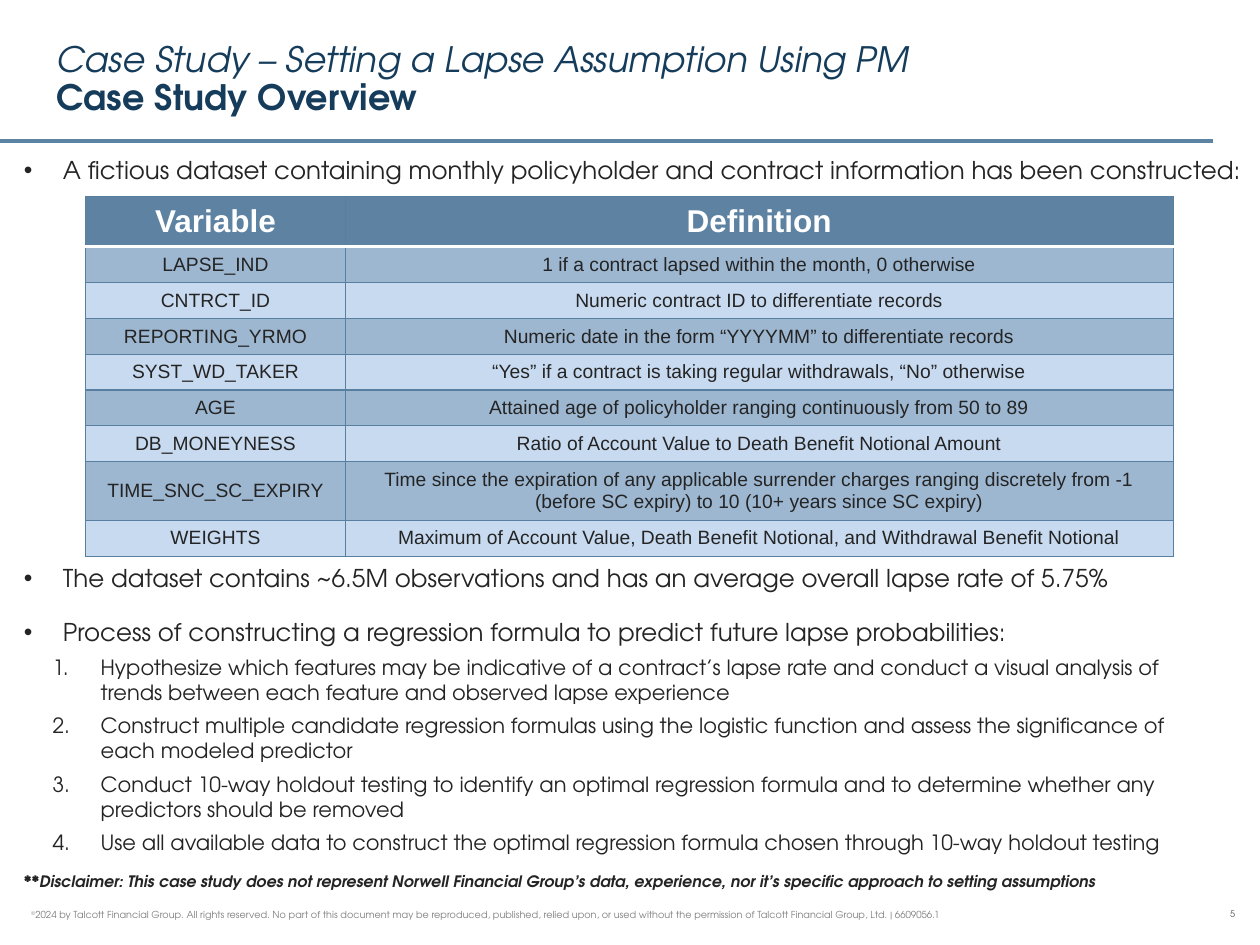
"""Build the case study overview slide on a lapse assumption."""
from lxml.etree import SubElement
from pptx import Presentation
from pptx.dml.color import RGBColor
from pptx.enum.shapes import MSO_CONNECTOR
from pptx.enum.text import MSO_ANCHOR, PP_ALIGN
from pptx.oxml.ns import qn
from pptx.util import Cm, Pt

BODY_FONT, TABLE_FONT = "TeX Gyre Adventor", "Arial"
INK, NAVY, STEEL, WHITE = "242424", "153C5B", "5D82A2", "FFFFFF"
RULE, GRID, BANDS = "5D83A3", "597FA0", ("9DB7D1", "C8DAF0")

TITLE = ("Case Study – Setting a Lapse Assumption Using PM", "Case Study Overview")
INTRO = "A fictious dataset containing monthly policyholder and contract information has been constructed:"
VARIABLES = [
    ("Variable", "Definition"),
    ("LAPSE_IND", "1 if a contract lapsed within the month, 0 otherwise"),
    ("CNTRCT_ID", "Numeric contract ID to differentiate records"),
    ("REPORTING_YRMO", "Numeric date in the form “YYYYMM” to differentiate records"),
    ("SYST_WD_TAKER", "“Yes” if a contract is taking regular withdrawals, “No” otherwise"),
    ("AGE", "Attained age of policyholder ranging continuously from 50 to 89"),
    ("DB_MONEYNESS", "Ratio of Account Value to Death Benefit Notional Amount"),
    ("TIME_SNC_SC_EXPIRY", "Time since the expiration of any applicable surrender charges ranging "
     "discretely from -1 (before SC expiry) to 10 (10+ years since SC expiry)"),
    ("WEIGHTS", "Maximum of Account Value, Death Benefit Notional, and Withdrawal Benefit Notional"),
]
COLUMN_WIDTHS = (5.23, 16.69)
ROW_HEIGHTS = [0.97] + [0.69] * 6 + [1.11, 0.71]
FINDINGS = [
    "The dataset contains ~6.5M observations and has an average overall lapse rate of 5.75%",
    "Process of constructing a regression formula to predict future lapse probabilities:",
]
STEPS = [
    "Hypothesize which features may be indicative of a contract’s lapse rate and conduct a visual "
    "analysis of trends between each feature and observed lapse experience",
    "Construct multiple candidate regression formulas using the logistic function and assess the "
    "significance of each modeled predictor",
    "Conduct 10-way holdout testing to identify an optimal regression formula and to determine "
    "whether any predictors should be removed",
    "Use all available data to construct the optimal regression formula chosen through 10-way "
    "holdout testing",
]
DISCLAIMER = ("**Disclaimer: This case study does not represent Norwell Financial Group’s data, "
              "experience, nor it’s specific approach to setting assumptions")
COPYRIGHT = ("2024 by Talcott Financial Group. All rights reserved. No part of this document may be "
             "reproduced, published, relied upon, or used without the permission of Talcott "
             "Financial Group, Ltd. | 6609056.1")
PAGE = "5"


def color(hex_string):
    return RGBColor.from_string(hex_string)


def write(paragraph, text, size=14, font=BODY_FONT, ink=INK, bold=False, italic=False):
    run = paragraph.add_run()
    run.text = text
    run.font.size, run.font.name = Pt(size), font
    run.font.bold, run.font.italic = bold, italic
    run.font.color.rgb = color(ink)
    return run


def text_frame(slide, left, top, width, height, anchor=MSO_ANCHOR.TOP):
    frame = slide.shapes.add_textbox(Cm(left), Cm(top), Cm(width), Cm(height)).text_frame
    frame.word_wrap = True
    frame.vertical_anchor = anchor
    return frame


def add_marker(paragraph, margin, hanging, numbered=False):
    properties = paragraph._p.get_or_add_pPr()
    properties.set("marL", str(Cm(margin)))
    properties.set("indent", str(-Cm(hanging)))
    if numbered:
        paragraph.level = 1
        SubElement(properties, qn("a:buAutoNum"), type="arabicPeriod")
    else:
        SubElement(properties, qn("a:buFont"), typeface="Arial")
        SubElement(properties, qn("a:buChar"), char="•")


def add_border(cell, side, ink, points):
    border = SubElement(cell._tc.get_or_add_tcPr(), qn(f"a:ln{side}"), w=str(Pt(points)))
    SubElement(SubElement(border, qn("a:solidFill")), qn("a:srgbClr"), val=ink)


def add_variable_table(slide):
    table = slide.shapes.add_table(
        len(VARIABLES), len(COLUMN_WIDTHS), Cm(1.73), Cm(3.96),
        Cm(sum(COLUMN_WIDTHS)), Cm(sum(ROW_HEIGHTS))).table
    for column, width in zip(table.columns, COLUMN_WIDTHS):
        column.width = Cm(width)
    for index, (row, height, entries) in enumerate(zip(table.rows, ROW_HEIGHTS, VARIABLES)):
        row.height = Cm(height)
        header = index == 0
        for cell, entry in zip(row.cells, entries):
            for side in "LRTB":
                divider = (index, side) in ((0, "B"), (1, "T"))
                add_border(cell, side, *((WHITE, 2) if divider else (GRID, 0.75)))
            cell.fill.solid()
            cell.fill.fore_color.rgb = color(STEEL if header else BANDS[(index - 1) % 2])
            cell.vertical_anchor = MSO_ANCHOR.MIDDLE
            paragraph = cell.text_frame.paragraphs[0]
            paragraph.alignment = PP_ALIGN.CENTER
            write(paragraph, entry, size=18 if header else 11, font=TABLE_FONT,
                  ink=WHITE if header else INK, bold=header)


def add_findings(slide):
    frame = text_frame(slide, 0.23, 11.23, 24.69, 6.22)
    for index, finding in enumerate(FINDINGS):
        paragraph = frame.add_paragraph() if index else frame.paragraphs[0]
        add_marker(paragraph, 0.79, 0.79)
        if index:
            paragraph.space_before = Pt(14)
        write(paragraph, finding)
    for step in STEPS:
        paragraph = frame.add_paragraph()
        add_marker(paragraph, 1.55, 0.97, numbered=True)
        paragraph.space_before = Pt(4.5)
        write(paragraph, step, size=12)


def main():
    deck = Presentation()
    deck.slide_width, deck.slide_height = Cm(25.4), Cm(19.05)
    slide = deck.slides.add_slide(deck.slide_layouts[6])

    rule = slide.shapes.add_connector(MSO_CONNECTOR.STRAIGHT, Cm(24.46), Cm(2.84), Cm(0), Cm(2.84))
    rule.line.color.rgb = color(RULE)
    rule.line.width = Pt(2.25)
    SubElement(rule._element.spPr, qn("a:effectLst"))

    title = text_frame(slide, 0.89, 0.61, 19.63, 1.9, MSO_ANCHOR.BOTTOM).paragraphs[0]
    title.line_spacing = 0.9
    write(title, TITLE[0], size=20, ink=NAVY, italic=True)
    title.add_line_break()
    write(title, TITLE[1], size=20, ink=NAVY, bold=True)

    intro = text_frame(slide, 0.23, 3, 25.5, 0.97).paragraphs[0]
    add_marker(intro, 0.79, 0.79)
    write(intro, INTRO)

    add_variable_table(slide)
    add_findings(slide)

    disclaimer = text_frame(slide, 0.23, 17.45, 24.69, 0.64).paragraphs[0]
    write(disclaimer, DISCLAIMER, size=9, bold=True, italic=True)

    footer = text_frame(slide, 0.38, 18.19, 23.19, 0.48).paragraphs[0]
    symbol = write(footer, "©", size=5.5, ink="808080")
    symbol.font._element.set("baseline", "30000")
    write(footer, COPYRIGHT, size=5.5, ink="808080")

    page = text_frame(slide, 23.98, 17.98, 1.17, 0.89, MSO_ANCHOR.MIDDLE).paragraphs[0]
    page.alignment = PP_ALIGN.RIGHT
    write(page, PAGE, size=5.2, ink="5B5B5B")

    deck.save("out.pptx")


if __name__ == "__main__":
    main()
